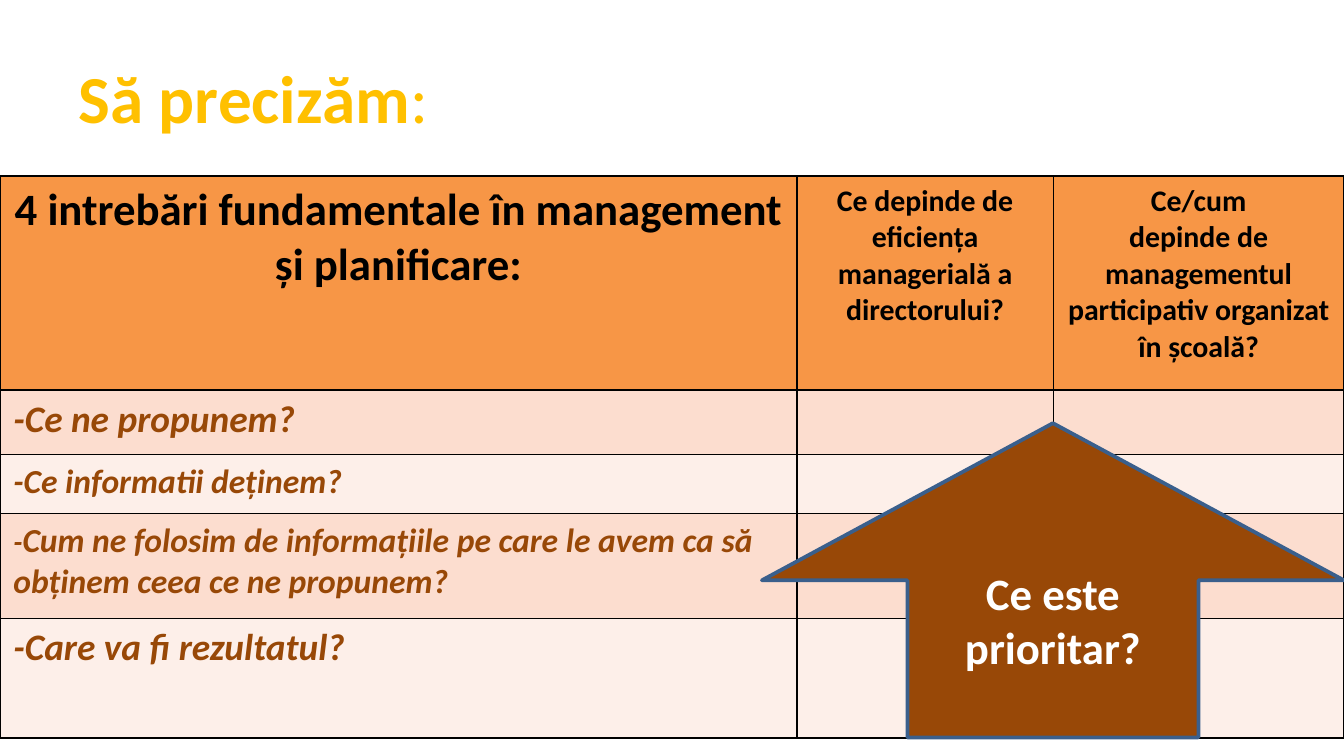
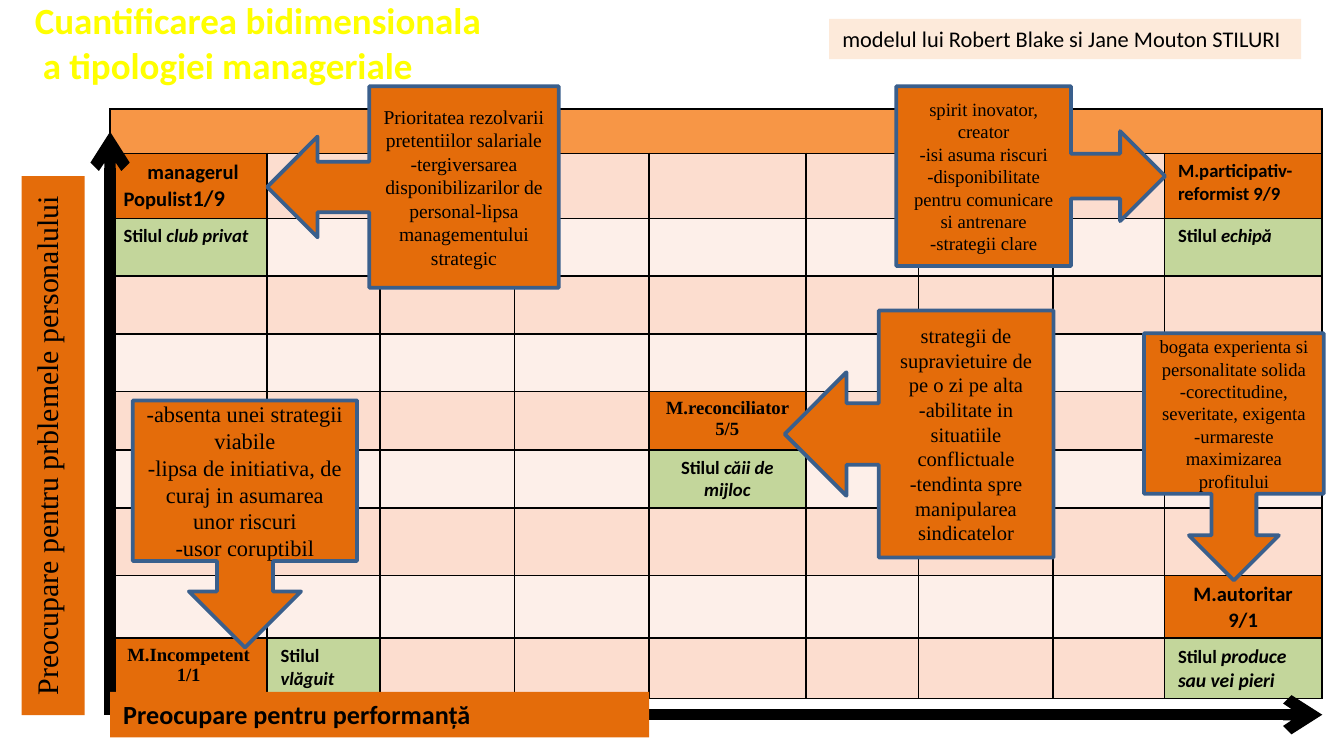
from lxml.etree import SubElement
from pptx import Presentation
from pptx.dml.color import RGBColor
from pptx.enum.shapes import MSO_CONNECTOR, MSO_SHAPE
from pptx.enum.text import MSO_ANCHOR, PP_ALIGN
from pptx.oxml import parse_xml
from pptx.oxml.ns import nsdecls, qn
from pptx.util import Cm, Pt

# Shared look
SANS, SERIF = "Calibri", "Times New Roman"
BLACK, WHITE, GOLD, YELLOW = "000000", "FFFFFF", "FFC000", "FFFF00"
HEADER, BROWN, OUTLINE = "F79646", "984807", "3A5F8C"
MANAGER, STYLE, PEACH = "E46C0A", "C3D69B", "FDEADA"
BANDS = ("FDEFE9", "FCDDCF")
CENTER = PP_ALIGN.CENTER

# Slide 1: a paragraph is a string or a list of (text, changes) runs
QUESTION_COLUMNS = (15.06, 4.85, 5.49)
QUESTION_ROWS = (4.04, 1.22, 1.12, 1.98, 2.26)
QUESTION_HEADERS = [
    (["4 intrebări fundamentale în management și planificare:"], 24),
    (["Ce depinde de eficiența managerială a directorului?"], 16),
    (["Ce/cum", "depinde de managementul participativ organizat în școală?"], 16),
]
QUESTIONS = [
    ("-Ce ne propunem?", 20),
    ("-Ce informatii deținem?", 18),
    ([("-", {"size": 16}),
      ("Cum ne folosim de informațiile pe care le avem ca să obținem "
       "ceea ce ne propunem?", {})], 18),
    ("-Care va fi rezultatul?", 20),
]

# Slide 2
GRID_COLUMNS = (2.97, 2.13, 2.54, 2.54, 2.97, 2.13, 2.54, 2.11, 2.97)
GRID_ROWS = (0.84, 0.84, 1.09, 1.09, 1.09, 1.09, 1.09, 1.27, 1.09, 1.09)
ITALIC = {"italic": True}
GRID_CELLS = {  # (row, column): paragraph, fill, text settings
    (1, 0): ([("managerul Populist", {}), ("1/9", {"size": 12})], MANAGER,
             {"size": 11, "indent": 0.45}),
    (1, 8): ("M.participativ-reformist 9/9", MANAGER, {}),
    (2, 0): ([("Stilul ", {}), ("club privat", ITALIC)], STYLE, {}),
    (2, 8): ([("Stilul", {}), (" echipă", ITALIC)], STYLE, {}),
    (5, 4): ("M.reconciliator 5/5", MANAGER, {"font": SERIF, "align": CENTER}),
    (6, 4): ([("Stilul ", {}), ("căii de mijloc", ITALIC)], STYLE, {"align": CENTER}),
    (8, 8): ("M.autoritar 9/1", MANAGER, {"size": 11, "align": CENTER}),
    (9, 0): ("M.Incompetent 1/1", MANAGER, {"font": SERIF, "align": CENTER}),
    (9, 1): ([("Stilul ", {}), ("vlăguit", ITALIC)], STYLE, {}),
    (9, 8): ([("Stilul ", {}), ("produce sau vei pieri", {"italic": True, "size": 10.5})],
             STYLE, {}),
}
AXES = [((2.95, 13.51), (24.99, 13.51)), ((2.08, 13.51), (2.08, 2.49))]
LABELS = [  # place, fill, text, text settings, vertical
    ((2.08, 13.08, 10.19, 0.86), MANAGER, "Preocupare pentru performanță",
     {"size": 14, "bold": True}, False),
    ((0.41, 3.33, 1.19, 10.19), MANAGER, "Preocupare pentru prblemele personalului",
     {"size": 16, "font": SERIF, "align": CENTER}, True),
]
MODEL_LABEL = ((15.67, 0.36, 8.92, 0.76), PEACH,
               "modelul lui Robert Blake si Jane Mouton STILURI", {"size": 12}, False)
CALLOUTS = [  # preset, place, text size, paragraphs
    (MSO_SHAPE.LEFT_ARROW_CALLOUT, (5.05, 1.63, 5.51, 3.81), 10.5, [
        "Prioritatea rezolvarii pretentiilor salariale",
        "-tergiversarea disponibilizarilor de personal-lipsa managementului strategic"]),
    (MSO_SHAPE.LEFT_ARROW_CALLOUT, (14.83, 5.87, 5.08, 4.67), 11, [
        "strategii de supravietuire de pe o zi pe alta",
        "-abilitate in situatiile conflictuale",
        "-tendinta spre manipularea sindicatelor"]),
    (MSO_SHAPE.DOWN_ARROW_CALLOUT, (2.51, 7.57, 4.24, 4.67), 12, [
        "-absenta unei strategii viabile",
        "-lipsa de initiativa, de curaj in asumarea unor riscuri",
        "-usor coruptibil"]),
    (MSO_SHAPE.DOWN_ARROW_CALLOUT, (21.62, 6.3, 3.4, 4.67), 10, [
        "bogata experienta si personalitate solida",
        "-corectitudine, severitate, exigenta",
        "-urmareste maximizarea profitului"]),
    (MSO_SHAPE.RIGHT_ARROW_CALLOUT, (16.94, 1.63, 5.08, 3.4), 10, [
        "spirit inovator, creator",
        "-isi asuma riscuri",
        "-disponibilitate pentru comunicare si antrenare",
        "-strategii clare"]),
]


def color(code):
    return RGBColor.from_string(code)


def write(frame, paragraphs, size, ink=BLACK, font=SANS, bold=False, italic=False,
          align=PP_ALIGN.LEFT, indent=0):
    frame.word_wrap = True
    for index, content in enumerate(paragraphs):
        para = frame.add_paragraph() if index else frame.paragraphs[0]
        para.alignment = align
        if indent:
            para._p.get_or_add_pPr().set("indent", str(Cm(indent)))
        para.font.name, para.font.size = font, Pt(size)
        para.font.bold, para.font.italic = bold, italic
        para.font.color.rgb = color(ink)
        for text, changes in [(content, {})] if isinstance(content, str) else content:
            span = para.add_run()
            span.text = text
            if "size" in changes:
                span.font.size = Pt(changes["size"])
            if "italic" in changes:
                span.font.italic = changes["italic"]
            if "bold" in changes:
                span.font.bold = changes["bold"]


def add_title(page, place, paragraphs, size, ink, anchor):
    frame = page.shapes.add_textbox(*map(Cm, place)).text_frame
    frame.vertical_anchor = anchor
    write(frame, paragraphs, size, ink, bold=True)
    return frame


def add_shape(page, preset, place, fill, paragraphs, outline=None,
              anchor=MSO_ANCHOR.MIDDLE, **settings):
    shape = page.shapes.add_shape(preset, *map(Cm, place))
    shape.shadow.inherit = False
    shape.fill.solid()
    shape.fill.fore_color.rgb = color(fill)
    if outline:
        shape.line.color.rgb = color(outline)
        shape.line.width = Pt(2)
    else:
        shape.line.fill.background()
    shape.text_frame.vertical_anchor = anchor
    write(shape.text_frame, paragraphs, **settings)
    return shape


def add_label(page, place, fill, text, settings, vertical):
    label = add_shape(page, MSO_SHAPE.RECTANGLE, place, fill, [text],
                      anchor=MSO_ANCHOR.TOP, **settings)
    if vertical:
        label.text_frame._txBody.bodyPr.set("vert", "vert270")


def add_axis(page, start, end):
    axis = page.shapes.add_connector(MSO_CONNECTOR.STRAIGHT, *map(Cm, start + end))
    axis.line.color.rgb = color(BLACK)
    axis.line.width = Pt(6)
    SubElement(axis.line._get_or_add_ln(), qn("a:tailEnd"), type="arrow")
    SubElement(axis._element.spPr, qn("a:effectLst"))


def fill_cell(cell, fill):
    cell.fill.solid()
    cell.fill.fore_color.rgb = color(fill)


def add_table(page, left, top, columns, rows):
    """Add a table with a header row, banded body rows and thin black borders."""
    table = page.shapes.add_table(len(rows), len(columns), Cm(left), Cm(top),
                                  Cm(sum(columns)), Cm(sum(rows))).table
    table.first_row = table.horz_banding = False
    for column, width in zip(table.columns, columns):
        column.width = Cm(width)
    for number, (row, height) in enumerate(zip(table.rows, rows)):
        row.height = Cm(height)
        for cell in row.cells:
            fill_cell(cell, BANDS[number % 2] if number else HEADER)
            properties = cell._tc.get_or_add_tcPr()
            for position, side in enumerate("LRTB"):
                properties.insert(position, parse_xml(
                    f'<a:ln{side} {nsdecls("a")} w="{Pt(1)}"><a:solidFill>'
                    f'<a:srgbClr val="{BLACK}"/></a:solidFill></a:ln{side}>'))
    return table


def shrink_empty_cells(table):
    for cell in table.iter_cells():
        if not cell.text_frame.text:
            SubElement(cell.text_frame.paragraphs[0]._p, qn("a:endParaRPr"), sz="1000")


def build_questions(page):
    add_title(page, (1.24, 0.79, 10.19, 2.06),
              [[("Să precizăm", {}), (":", {"bold": False})]], 36, GOLD, MSO_ANCHOR.MIDDLE)
    table = add_table(page, 0, 3.33, QUESTION_COLUMNS, QUESTION_ROWS)
    for column, (paragraphs, size) in enumerate(QUESTION_HEADERS):
        write(table.cell(0, column).text_frame, paragraphs, size, bold=True, align=CENTER)
    for row, (question, size) in enumerate(QUESTIONS, 1):
        write(table.cell(row, 0).text_frame, [question], size, BROWN, bold=True, italic=True)
    shrink_empty_cells(table)
    add_shape(page, MSO_SHAPE.UP_ARROW, (14.4, 8, 11, 5.94), BROWN,
              ["Ce este", "prioritar?"], OUTLINE,
              size=24, ink=WHITE, bold=True, align=CENTER)


def build_grid(page):
    title = add_title(page, (0.41, 0.79, 23.75, 1.27),
                      ["Cuantificarea bidimensionala", "a tipologiei manageriale"],
                      19.8, YELLOW, MSO_ANCHOR.BOTTOM)
    title.margin_bottom = Cm(0.42)
    title.paragraphs[1]._p.get_or_add_pPr().set("marL", str(Cm(0.15)))

    table = add_table(page, 2.08, 2.06, GRID_COLUMNS, GRID_ROWS)
    for (row, column), (content, fill, settings) in GRID_CELLS.items():
        cell = table.cell(row, column)
        fill_cell(cell, fill)
        write(cell.text_frame, [content], **{"size": 10, "bold": True, **settings})
    shrink_empty_cells(table)
    table.cell(0, 0).merge(table.cell(0, len(GRID_COLUMNS) - 1))

    for start, end in AXES:
        add_axis(page, start, end)
    for label in LABELS:
        add_label(page, *label)
    for preset, place, size, paragraphs in CALLOUTS:
        add_shape(page, preset, place, MANAGER, paragraphs, OUTLINE,
                  size=size, font=SERIF, align=CENTER)
    add_label(page, *MODEL_LABEL)


def main():
    deck = Presentation()
    deck.slide_width, deck.slide_height = Cm(25.4), Cm(14.29)
    for build in (build_questions, build_grid):
        build(deck.slides.add_slide(deck.slide_layouts[6]))
    deck.save("out.pptx")


if __name__ == "__main__":
    main()
